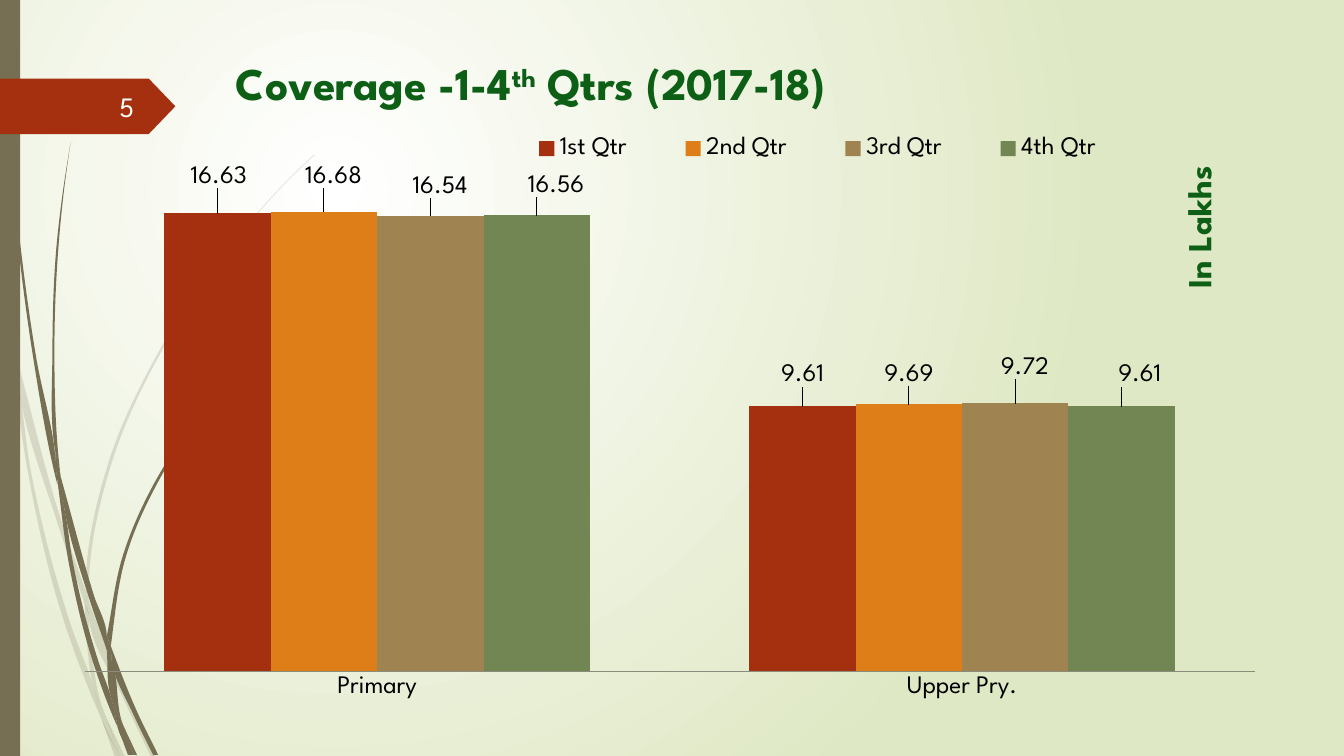
from math import dist

from lxml import etree
from pptx import Presentation
from pptx import util as u
from pptx.chart.data import CategoryChartData
from pptx.dml.color import RGBColor
from pptx.enum import chart as ch, shapes, text
from pptx.oxml import parse_xml
from pptx.oxml.ns import nsdecls, qn

FONT = "League Spartan"
WHITE = RGBColor(0xFF, 0xFF, 0xFF)
PALE_GREEN = RGBColor(0xDF, 0xE8, 0xC4)
OLIVE = RGBColor(0x76, 0x6F, 0x54)
RUST = RGBColor(0xA5, 0x30, 0x10)
ORANGE = RGBColor(0xDE, 0x7E, 0x18)
TAN = RGBColor(0x9F, 0x83, 0x51)
SAGE = RGBColor(0x72, 0x86, 0x53)
DARK_GREEN = RGBColor(0x0D, 0x5F, 0x15)
NUMBER_WHITE = RGBColor(0xFE, 0xFF, 0xFF)
AXIS_GREY = RGBColor(0x8A, 0x8C, 0x7C)
BLACK = RGBColor(0, 0, 0)

# Each blade of grass is its left and right edge, top to bottom, in 1/100 inch.
FAINT_BLADES = [
    ([(0, 299), (10, 344), (11, 350)], [(0, 282), (9, 322), (11, 350)]),
    ([(14, 345), (17, 376), (58, 522), (84, 599)], [(14, 345), (62, 520), (85, 586)]),
    ([(88, 596), (88, 610), (123, 694), (150, 751)], [(88, 596), (92, 607), (127, 692), (155, 751)]),
    ([(105, 711), (119, 751)], [(105, 711), (124, 751)]),
    ([(11, 350), (28, 470), (65, 621), (92, 693), (101, 714)],
     [(11, 350), (17, 376), (31, 469), (70, 619), (93, 683), (99, 707), (101, 714)]),
    ([(84, 599), (87, 646), (93, 683), (96, 692), (105, 711)],
     [(84, 599), (88, 608), (88, 610), (91, 646), (103, 706), (105, 711)]),
    ([(312, 153), (289, 175), (268, 197), (228, 244), (158, 348), (107, 461), (85, 584), (85, 586)],
     [(312, 154), (290, 175), (268, 198), (229, 245), (160, 349), (110, 462), (88, 584), (88, 596)]),
    ([(101, 714), (114, 751)], [(101, 714), (119, 751)]),
    ([(85, 586), (84, 599)], [(88, 596), (88, 608), (88, 610)]),
    ([(93, 683), (99, 707), (101, 714), (119, 751)], [(93, 683), (96, 692), (105, 711), (119, 751)]),
]
DARK_BLADES = [
    ([(3, 0), (4, 48), (7, 110), (17, 233), (33, 355), (56, 477), (57, 481)],
     [(4, 0), (5, 48), (8, 109), (19, 232), (36, 355), (55, 453), (57, 481)]),
    ([(60, 472), (64, 505), (88, 592), (106, 645)], [(60, 472), (93, 590), (106, 631), (106, 633)]),
    ([(110, 641), (111, 656), (132, 708), (152, 749)], [(110, 641), (113, 649), (136, 706), (157, 749)]),
    ([(57, 477), (68, 557), (93, 659), (111, 708), (117, 722)],
     [(57, 477), (64, 505), (72, 556), (98, 657), (110, 691), (116, 717), (117, 722)]),
    ([(70, 141), (62, 193), (56, 245), (52, 349), (55, 449), (60, 472)],
     [(70, 141), (63, 193), (58, 245), (54, 349), (58, 453), (60, 472)]),
    ([(122, 719), (133, 749)], [(122, 719), (136, 749)]),
    ([(55, 449), (55, 453), (57, 477), (64, 505)], [(55, 449), (60, 472), (64, 505)]),
    ([(260, 344), (245, 358), (231, 373), (204, 405), (156, 474), (122, 551), (106, 631)],
     [(261, 344), (245, 359), (231, 374), (205, 406), (158, 476), (125, 552), (111, 633), (110, 641)]),
    ([(117, 722), (127, 749)], [(117, 722), (131, 749)]),
    ([(106, 645), (110, 691), (116, 706), (122, 719)],
     [(106, 645), (109, 651), (111, 656), (121, 716), (122, 719)]),
    ([(106, 631), (106, 645)], [(110, 641), (111, 656)]),
    ([(110, 691), (116, 717), (117, 722), (130, 749)], [(110, 691), (116, 706), (122, 719), (133, 749)]),
]

# Series name, values, colour, and label shifts (x, y) as shares of the chart.
QUARTERS = [
    ("1st Qtr", (16.63, 9.61), RUST, [(0.001, -0.032), (0, -0.024)]),
    ("2nd Qtr", (16.68, 9.69), ORANGE, [(0.008, -0.03), (0, -0.021)]),
    ("3rd Qtr", (16.54, 9.72), TAN, [(0.008, -0.02), (0.008, -0.031)]),
    ("4th Qtr", (16.56, 9.61), SAGE, [(0.016, -0.021), (0.015, -0.024)]),
]


def cm_box(*lengths):
    return [u.Cm(length) for length in lengths]


def add_run(paragraph, words, size, color, bold=False):
    run = paragraph.add_run()
    run.text = words
    font = run.font
    font.name, font.size, font.bold = FONT, u.Pt(size), bold
    font.color.rgb = color
    return run


def paint(shape, color):
    shape.shadow.inherit = False
    shape.fill.solid()
    shape.fill.fore_color.rgb = color
    shape.line.fill.background()


def tangent(before, knot, after):
    """Return the unit direction of a smooth curve at the knot."""
    near, far = dist(before, knot) or 1, dist(knot, after) or 1
    slope = [(k - b) / near * far + (a - k) / far * near
             for b, k, a in zip(before, knot, after)]
    size = dist(slope, (0, 0)) or 1
    return [part / size for part in slope]


def bend(blade, corner):
    """Turn a blade's straight segments into curves, except the one at the corner."""
    segments = list(blade.element.iter(qn("a:moveTo"), qn("a:lnTo")))
    knots = [(int(s[0].get("x")), int(s[0].get("y"))) for s in segments]
    for first, last in ((0, corner), (corner, len(knots))):
        edge = knots[first:last]
        slopes = [tangent(*way) for way in zip(edge[:1] + edge, edge, edge[1:] + edge[-1:])]
        for i, (start, end) in enumerate(zip(edge, edge[1:])):
            reach = dist(start, end) / 3
            curve = etree.Element(qn("a:cubicBezTo"))
            for (x, y), (dx, dy), pull in ((start, slopes[i], reach),
                                           (end, slopes[i + 1], -reach), (end, (0, 0), 0)):
                etree.SubElement(curve, qn("a:pt"), x=str(round(x + dx * pull)),
                                 y=str(round(y + dy * pull)))
            line = segments[first + i + 1]
            line.getparent().replace(line, curve)


def set_background(slide):
    fill = slide.background.fill
    fill.gradient()
    for stop, color, position in zip(fill.gradient_stops, (WHITE, PALE_GREEN), (0, 1)):
        stop.color.rgb, stop.position = color, position
    gradient = next(slide.element.iter(qn("a:gradFill")))
    gradient.replace(gradient.find(qn("a:lin")), parse_xml(
        f'<a:path {nsdecls("a")} path="circle">'
        '<a:fillToRect l="50000" t="50000" r="100000" b="100000"/></a:path>'))


def add_grass(slide, left, top, blades, opacity):
    tuft = slide.shapes.add_group_shape()
    for left_edge, right_edge in blades:
        outline = [(x * 100, y * 100) for x, y in left_edge + right_edge[::-1]]
        builder = tuft.shapes.build_freeform(*outline[0], scale=u.Cm(2.54) / 10000)
        builder.add_line_segments(outline[1:], close=False)
        blade = builder.convert_to_shape(left, top)
        bend(blade, len(left_edge))
        etree.SubElement(next(blade.element.iter(qn("a:path"))), qn("a:close"))
        paint(blade, OLIVE)
        if opacity < 100:
            tint = blade.element.spPr.find(qn("a:solidFill"))[0]
            etree.SubElement(tint, qn("a:alpha")).set("val", str(opacity * 1000))


def add_side_bar(slide, left, top, width, height):
    paint(slide.shapes.add_shape(shapes.MSO_SHAPE.RECTANGLE, left, top, width, height), OLIVE)


def add_label(slide, box, words, size, color, align, bold=False, rotation=0):
    label = slide.shapes.add_textbox(*box)
    label.rotation = rotation
    frame = label.text_frame
    frame.word_wrap = True
    frame.vertical_anchor = text.MSO_ANCHOR.MIDDLE
    frame.paragraphs[0].alignment = align
    add_run(frame.paragraphs[0], words, size, color, bold)


def add_page_flag(slide, left, top, width, height):
    flag = slide.shapes.add_shape(shapes.MSO_SHAPE.PENTAGON, left, top, width, height)
    flag.adjustments[0] = 0.48
    paint(flag, RUST)
    number_box = (left + u.Cm(1.47), top + u.Cm(0.2), u.Cm(2.16), u.Cm(1.02))
    add_label(slide, number_box, "5", 20, NUMBER_WHITE, text.PP_ALIGN.RIGHT)


def fill_title(slide, left, top, width, height):
    title = slide.shapes.title
    title.left, title.top, title.width, title.height = left, top, width, height
    frame = title.text_frame
    frame.word_wrap = True
    frame.auto_size = text.MSO_AUTO_SIZE.NONE
    frame.vertical_anchor = text.MSO_ANCHOR.TOP
    frame.paragraphs[0].alignment = text.PP_ALIGN.LEFT
    for words, baseline in (("Coverage -1-4", 0), ("th", 30000), (" Qtrs (2017-18)", 0)):
        run = add_run(frame.paragraphs[0], words, 32.4, DARK_GREEN, True)
        run.font._element.set("baseline", str(baseline))


def manual_layout(target="", **places):
    """Return a c:layout; x and y given without w and h are shifts for labels."""
    inner = f'<c:layoutTarget val="{target}"/>' if target else ""
    modes = '<c:xMode val="edge"/><c:yMode val="edge"/>' if "w" in places else ""
    sizes = "".join(f'<c:{key} val="{value}"/>' for key, value in places.items())
    return parse_xml(f'<c:layout {nsdecls("c")}><c:manualLayout>{inner}{modes}{sizes}'
                     '</c:manualLayout></c:layout>')


def hide_leader_lines(labels):
    for setting in labels.findall(qn("c:showLeaderLines")):
        labels.remove(setting)
    labels.append(parse_xml(
        f'<c:extLst {nsdecls("c")}><c:ext uri="{{CE6537A1-D6FC-4f65-9D91-7224C49458BB}}" '
        'xmlns:c15="http://schemas.microsoft.com/office/drawing/2012/chart">'
        '<c15:showLeaderLines val="0"/></c:ext></c:extLst>'))


def add_coverage_chart(slide, left, top, width, height):
    data = CategoryChartData()
    data.categories = ["Primary", "Upper Pry."]
    for name, values, _, _ in QUARTERS:
        data.add_series(name, values)
    chart = slide.shapes.add_chart(
        ch.XL_CHART_TYPE.COLUMN_CLUSTERED, left, top, width, height, data).chart
    chart.has_title = False
    chart.font.name, chart.font.size = FONT, u.Pt(18)
    chart.font.color.rgb = BLACK

    levels, stages = chart.value_axis, chart.category_axis
    levels.minimum_scale, levels.maximum_scale, levels.major_unit = 0, 20, 1
    levels.has_major_gridlines = levels.visible = False
    stages.major_tick_mark = ch.XL_TICK_MARK.NONE
    stages.format.line.color.rgb = AXIS_GREY
    stages.format.line.width = u.Pt(0.75)

    columns = chart.plots[0]
    columns.gap_width, columns.overlap = 150, 0
    columns.vary_by_categories = False
    for quarter, (_, _, color, shifts) in zip(columns.series, QUARTERS):
        quarter.format.fill.solid()
        quarter.format.fill.fore_color.rgb = color
        quarter.data_labels.show_value = True
        for index in range(len(shifts)):
            quarter.points[index].data_label.position = ch.XL_LABEL_POSITION.OUTSIDE_END
        for mark, (x, y) in zip(quarter._element.iter(qn("c:dLbl")), shifts):
            mark.find(qn("c:idx")).addnext(manual_layout(x=x, y=y))
        hide_leader_lines(quarter._element.find(qn("c:dLbls")))

    chart.has_legend = True
    chart.legend.position = ch.XL_LEGEND_POSITION.TOP
    chart.legend.include_in_layout = False
    for part, place, layout in (
            ("c:plotArea", 0, manual_layout("inner", x=0.02, y=0.083, w=0.961, h=0.853)),
            ("c:legend", 1, manual_layout(x=0.352, y=0.092, w=0.54, h=0.07))):
        area = next(chart._chartSpace.iter(qn(part)))
        for default in area.findall(qn("c:layout")):
            area.remove(default)
        area.insert(place, layout)


def main():
    deck = Presentation()
    deck.slide_width, deck.slide_height = cm_box(33.87, 19.05)
    slide = deck.slides.add_slide(deck.slide_layouts[5])
    set_background(slide)
    add_grass(slide, 0, 0, FAINT_BLADES, 20)
    add_grass(slide, 0, 0, DARK_BLADES, 100)
    add_side_bar(slide, *cm_box(0, 0, 0.51, 19.05))
    add_page_flag(slide, *cm_box(0, 1.98, 4.42, 1.4))
    fill_title(slide, *cm_box(5.69, 1.27, 19.05, 1.27))
    add_coverage_chart(slide, *cm_box(1.52, 1.68, 30.68, 16.28))
    add_label(slide, cm_box(27.33, 4.88, 5.72, 1.7), "In Lakhs", 24, DARK_GREEN,
              text.PP_ALIGN.CENTER, bold=True, rotation=270)
    deck.save("out.pptx")


if __name__ == "__main__":
    main()
